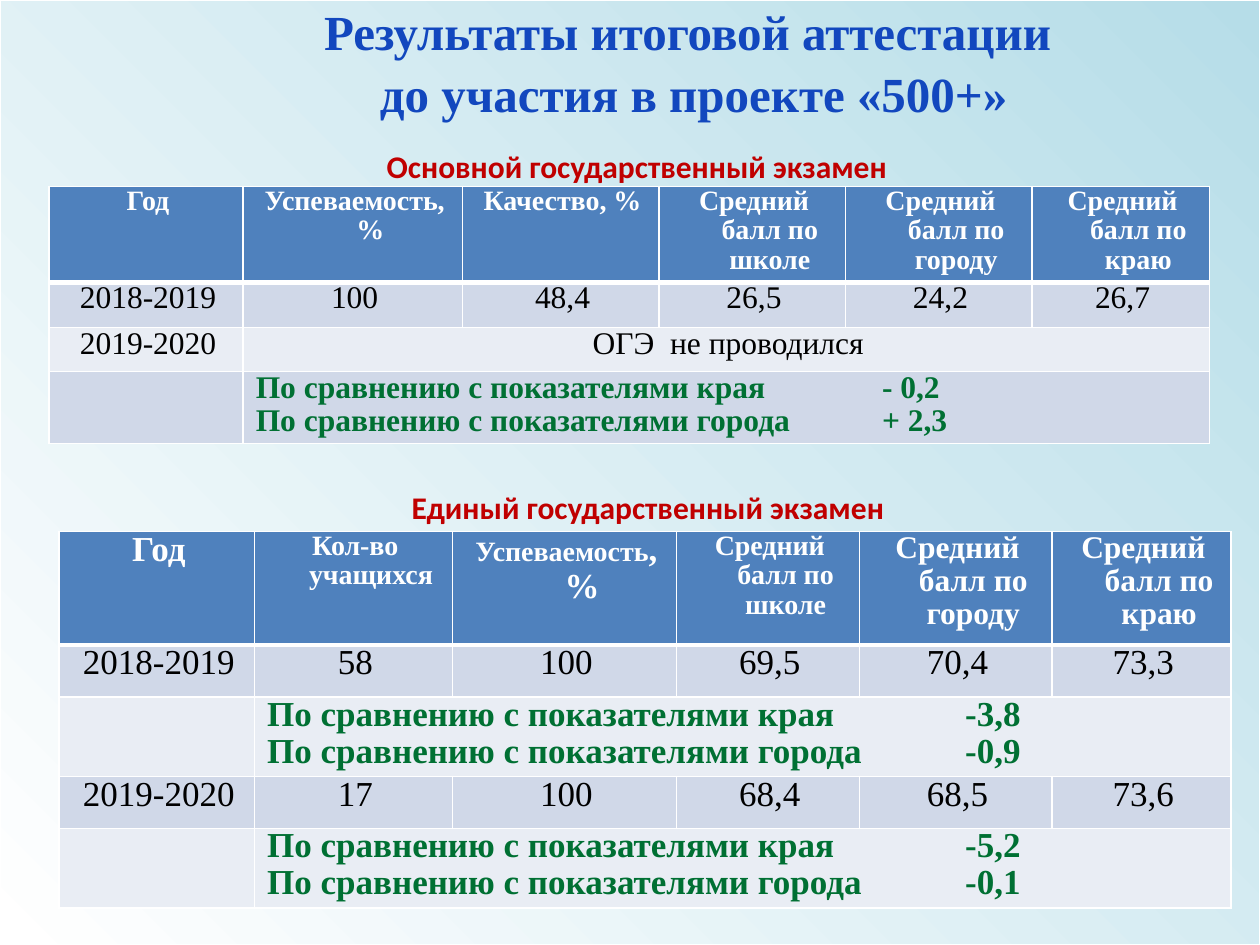
import pptx
import pptx.util
import pptx.dml.color
import pptx.enum.shapes
import pptx.enum.text
import pptx.oxml
import pptx.oxml.ns
from lxml import etree

RGBColor = pptx.dml.color.RGBColor
ALIGN = pptx.enum.text.PP_ALIGN
ANCHOR = pptx.enum.text.MSO_ANCHOR

WHITE = RGBColor(0xFF, 0xFF, 0xFF)
BLACK = RGBColor(0, 0, 0)
SKY = RGBColor(0xB6, 0xDD, 0xE8)
TITLE_BLUE = RGBColor(0x12, 0x47, 0xBE)
RED = RGBColor(0xC0, 0, 0)
GREEN = RGBColor(0, 0x70, 0x33)
HEADER = RGBColor(0x4F, 0x81, 0xBD)
BANDS = (RGBColor(0xD0, 0xD8, 0xE8), RGBColor(0xE9, 0xED, 0xF4))
SERIF, SANS = "Times New Roman", "Calibri"

# The slide is a grid of 100 columns and 75 rows, each 0.1 inch
COLS, ROWS = 100, 75


def grid(n):
    return pptx.util.Inches(n / 10)


def add_run(p, text, **fmt):
    r = p.add_run()
    r.text = text
    color = fmt.pop("color")
    for name, value in fmt.items():
        setattr(r.font, name, value)
    r.font.color.rgb = color


def add_background(s):
    sp = s.shapes.add_shape(pptx.enum.shapes.MSO_SHAPE.RECTANGLE,
                            0, 0, grid(COLS), grid(ROWS))
    sp.shadow.inherit = False
    sp.fill.gradient()
    sp.fill.gradient_angle = 45
    for stop, color in zip(sp.fill.gradient_stops, (WHITE, SKY)):
        stop.color.rgb = color
    sp.line.color.rgb = WHITE
    sp.line.width = pptx.util.Pt(0.75)


def add_heading(s, box, text, size, font, color, top=0, bottom=0, spacing=1.0):
    sp = s.shapes.add_textbox(*map(grid, box))
    tf = sp.text_frame
    frame = {"word_wrap": True, "vertical_anchor": ANCHOR.MIDDLE,
             "margin_top": grid(top), "margin_bottom": grid(bottom)}
    for name, value in frame.items():
        setattr(tf, name, value)
    lines = text.split("\n")
    for i, line in enumerate(lines):
        p = tf.paragraphs[0] if i == 0 else tf.add_paragraph()
        p.alignment = ALIGN.CENTER
        p.line_spacing = spacing
        add_run(p, line, size=pptx.util.Pt(size), name=font, bold=True, color=color)


def set_borders(cell, is_header):
    widths = {"lnL": 1, "lnR": 1, "lnB": 1}
    if is_header:
        widths.update(lnT=1, lnB=3)
    tc_pr = cell._tc.get_or_add_tcPr()
    for tag in ("lnL", "lnR", "lnT", "lnB"):
        if tag in widths:
            ln = etree.SubElement(tc_pr, pptx.oxml.ns.qn("a:" + tag),
                                  w=str(pptx.util.Pt(widths[tag])))
            fill = etree.SubElement(ln, pptx.oxml.ns.qn("a:solidFill"))
            etree.SubElement(fill, pptx.oxml.ns.qn("a:srgbClr"), val=str(WHITE))


def style_cell(cell, fill, is_header=False):
    set_borders(cell, is_header)
    cell.fill.solid()
    cell.fill.fore_color.rgb = fill
    margins = {"margin_left": 0.7, "margin_right": 0.7,
               "margin_top": 0, "margin_bottom": 0}
    for name, value in margins.items():
        setattr(cell, name, grid(value))


def write_centred(cell, runs, color, bold):
    p = cell.text_frame.paragraphs[0]
    p.alignment = ALIGN.CENTER
    p.line_spacing = 0.95
    # Hanging indent
    p_pr = p._p.get_or_add_pPr()
    p_pr.set("marL", str(grid(2.8)))
    p_pr.set("indent", str(grid(-2.5)))
    for text, size in runs:
        add_run(p, text, size=pptx.util.Pt(size), name=SERIF, bold=bold, color=color)


def write_comparison(cell, values, size, tab):
    cell.margin_left = grid(1)
    tf = cell.text_frame
    for i, (place, value) in enumerate(zip(("края", "города"), values)):
        p = tf.paragraphs[0] if i == 0 else tf.add_paragraph()
        p.line_spacing = 0.95
        p_pr = p._p.get_or_add_pPr()
        tabs = etree.SubElement(p_pr, pptx.oxml.ns.qn("a:tabLst"))
        etree.SubElement(tabs, pptx.oxml.ns.qn("a:tab"), pos=str(grid(tab)), algn="l")
        add_run(p, f"По сравнению с показателями {place}\t{value}",
                size=pptx.util.Pt(size), name=SERIF, bold=True, color=GREEN)


def add_results(s, left, top, widths, heights, header, body, size, tab):
    """A list row fills all cells, a (year, text) row merges, a dict row compares."""
    table = s.shapes.add_table(len(heights), len(widths), grid(left), grid(top),
                               grid(sum(widths)), grid(sum(heights))).table
    for column, width in zip(table.columns, widths):
        column.width = grid(width)
    for row, height in zip(table.rows, heights):
        row.height = grid(height)
    for i in range(len(heights)):
        for j in range(len(widths)):
            style_cell(table.cell(i, j), BANDS[(i - 1) % 2] if i else HEADER, i == 0)

    for j, runs in enumerate(header):
        write_centred(table.cell(0, j), runs, WHITE, True)
    for i, row in enumerate(body, 1):
        if not isinstance(row, list):
            table.cell(i, 1).merge(table.cell(i, len(widths) - 1))
        if isinstance(row, dict):
            write_comparison(table.cell(i, 1), row["compare"], size, tab)
            continue
        for j, text in enumerate(row):
            write_centred(table.cell(i, j), [(text, size)], BLACK, False)


def main():
    prs = pptx.Presentation()
    prs.slide_width, prs.slide_height = grid(COLS), grid(ROWS)
    s = prs.slides.add_slide(prs.slide_layouts[6])
    add_background(s)

    # Title and table headings
    add_heading(s, (14.8, 3.9, 80.5, 5.8),
                "Результаты итоговой аттестации \nдо участия в проекте «500+»",
                28, SERIF, TITLE_BLUE, bottom=4, spacing=1.05)
    add_heading(s, (14.8, 8.6, 71.5, 5.8), "Основной государственный экзамен",
                18, SANS, RED, top=3.3)
    add_heading(s, (7.8, 39.1, 86.7, 7.8), " Единый государственный экзамен",
                18, SANS, RED, bottom=5.6)

    # Basic state exam
    averages = [f"Средний балл по {place}" for place in ("школе", "городу", "краю")]
    add_results(
        s, 3.9, 14.8, (15.4, 17.4, 15.6, 14.8, 14.8, 14.1), (7.4, 3.6, 3.5, 5.6),
        [[(text, 16)] for text in ["Год", "Успеваемость, %", "Качество, %"] + averages],
        [["2018-2019", "100", "48,4", "26,5", "24,2", "26,7"],
         ("2019-2020", "ОГЭ  не проводился"),
         {"compare": ("- 0,2", "+ 2,3")}],
        size=18, tab=49.7)

    # Unified state exam
    add_results(
        s, 4.7, 42.2, (15.5, 15.7, 17.8, 14.5, 15.3, 14.2), (9, 4.1, 6.2, 4.1, 6.2),
        [[("Год", 20)], [("Кол-во учащихся", 16)], [("Успеваемость", 16), (", %", 20)]]
        + [[run] for run in zip(averages, (16, 18, 18))],
        [["2018-2019", "58", "100", "69,5", "70,4", "73,3"],
         {"compare": ("-3,8", "-0,9")},
         ["2019-2020", "17", "100", "68,4", "68,5", "73,6"],
         {"compare": ("-5,2", "-0,1")}],
        size=20, tab=55.4)

    prs.save("out.pptx")


if __name__ == "__main__":
    main()
